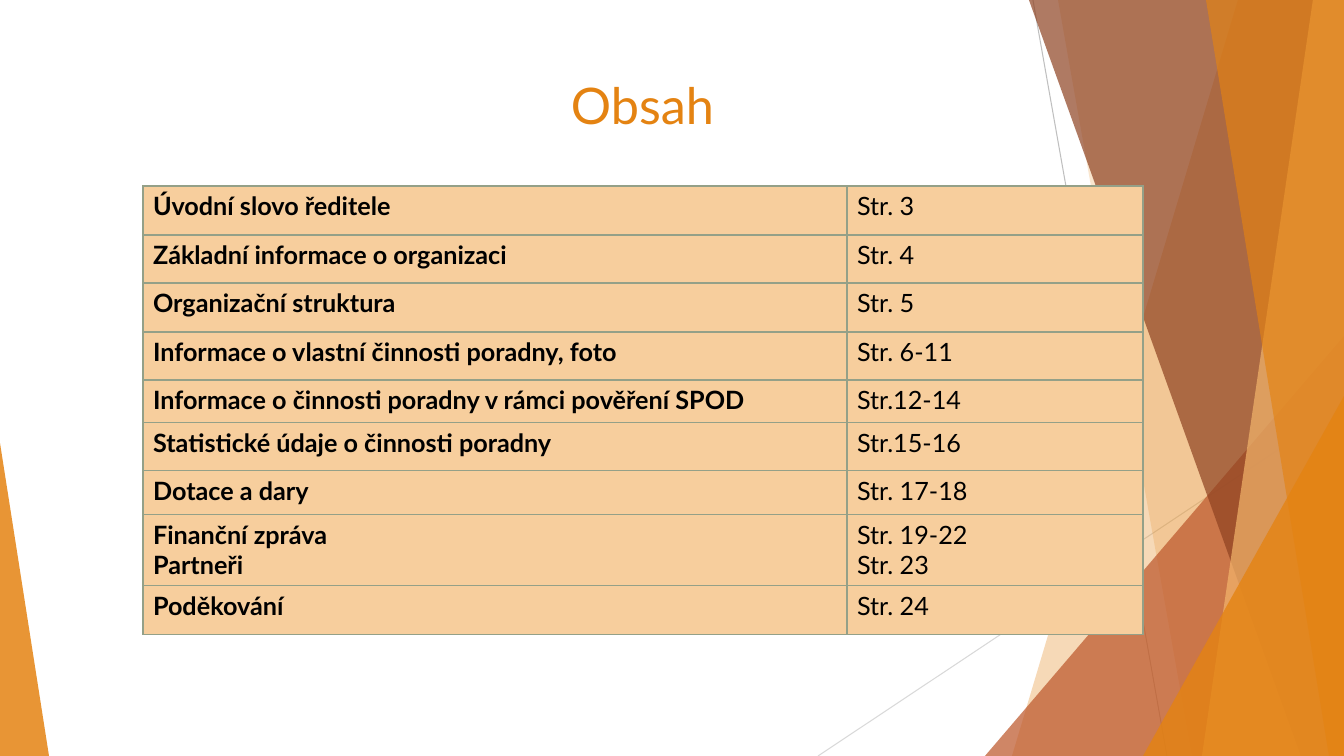
from lxml.etree import SubElement
from pptx import Presentation
from pptx.dml.color import RGBColor
from pptx.enum.shapes import MSO_CONNECTOR, MSO_SHAPE
from pptx.enum.text import MSO_ANCHOR, PP_ALIGN
from pptx.oxml import parse_xml
from pptx.oxml.ns import nsdecls, qn
from pptx.util import Pt

WIDTH, HEIGHT = 1344, 756
SCALE = 12192000 / WIDTH
FONT = "Lato"
COLORS = {
    "orange": "E48312",
    "light orange": "F3B56C",
    "rust": "BD582C",
    "brown": "8E4221",
    "cell": "F7CE9D",
    "border": "94A088",
    "text": "000000",
    "grey": "BFBFBF",
    "light grey": "D9D9D9",
}
CONTENTS = [
    ("Úvodní slovo ředitele", "Str. 3", 49),
    ("Základní informace o organizaci", "Str. 4", 48),
    ("Organizační struktura", "Str. 5", 49),
    ("Informace o vlastní činnosti poradny, foto", "Str. 6-11", 48),
    ("Informace o činnosti poradny v rámci pověření SPOD", "Str.12-14", 43),
    ("Statistické údaje o činnosti poradny", "Str.15-16", 48),
    ("Dotace a dary", "Str. 17-18", 44),
    ("Finanční zpráva\nPartneři", "Str. 19-22\nStr. 23", 70),
    ("Poděkování", "Str. 24", 49),
]


def px(length):
    return round(length * SCALE)


def rgb(name):
    return RGBColor.from_string(COLORS[name])


class SlideBuilder:
    def __init__(self, presentation):
        self.slide = presentation.slides.add_slide(presentation.slide_layouts[5])
        self.shapes = self.slide.shapes

    def paint(self, shape, color, opacity):
        shape.shadow.inherit = False
        shape.line.fill.background()
        shape.fill.solid()
        shape.fill.fore_color.rgb = rgb(color)
        color_element = shape.element.spPr.find(qn("a:solidFill"))[0]
        SubElement(color_element, qn("a:alpha"), val=str(opacity * 1000))

    def line(self, x1, y1, x2, y2, color):
        connector = self.shapes.add_connector(
            MSO_CONNECTOR.STRAIGHT, px(x1), px(y1), px(x2), px(y2))
        connector.line.color.rgb = rgb(color)
        connector.line.width = Pt(0.75)
        SubElement(connector.element.spPr, qn("a:effectLst"))

    def right_band(self, top_x, bottom_x, color, opacity):
        builder = self.shapes.build_freeform(top_x, 0, scale=SCALE)
        builder.add_line_segments([(WIDTH, 0), (WIDTH, HEIGHT), (bottom_x, HEIGHT)])
        self.paint(builder.convert_to_shape(), color, opacity)

    def bottom_triangle(self, left, top, width, apex, color, opacity):
        shape = self.shapes.add_shape(
            MSO_SHAPE.ISOSCELES_TRIANGLE,
            px(left), px(top), px(width), px(HEIGHT - top))
        shape.adjustments[0] = apex
        self.paint(shape, color, opacity)

    def style(self, paragraph, size, color, bold=False):
        paragraph.font.name = FONT
        paragraph.font.size = Pt(size)
        paragraph.font.bold = bold
        paragraph.font.color.rgb = rgb(color)

    def title(self, text, left, top, width, height):
        title = self.shapes.title
        self.shapes.element.append(title.element)
        title.left, title.top = px(left), px(top)
        title.width, title.height = px(width), px(height)
        title.text_frame.text = text
        title.text_frame.vertical_anchor = MSO_ANCHOR.TOP
        paragraph = title.text_frame.paragraphs[0]
        paragraph.alignment = PP_ALIGN.CENTER
        self.style(paragraph, 36, "orange")

    def cell(self, cell, text, bold):
        cell.text = text
        cell.fill.solid()
        cell.fill.fore_color.rgb = rgb("cell")
        for paragraph in cell.text_frame.paragraphs:
            self.style(paragraph, 18, "text", bold)
        properties = cell._tc.get_or_add_tcPr()
        for index, side in enumerate("LRTB"):
            properties.insert(index, parse_xml(
                f'<a:ln{side} {nsdecls("a")} w="{Pt(1)}"><a:solidFill>'
                f'<a:srgbClr val="{COLORS["border"]}"/></a:solidFill></a:ln{side}>'))

    def contents_table(self, rows, left, top, column_widths):
        height = sum(row[-1] for row in rows)
        table = self.shapes.add_table(
            len(rows), len(column_widths), px(left), px(top),
            px(sum(column_widths)), px(height)).table
        table.first_row = False
        table.horz_banding = False
        for column, width in zip(table.columns, column_widths):
            column.width = px(width)
        for row, (heading, pages, row_height) in zip(table.rows, rows):
            row.height = px(row_height)
            self.cell(row.cells[0], heading, True)
            self.cell(row.cells[1], pages, False)


def main():
    presentation = Presentation()
    presentation.slide_width = px(WIDTH)
    presentation.slide_height = px(HEIGHT)
    builder = SlideBuilder(presentation)

    builder.line(1033, 0, 1167, HEIGHT, "grey")
    builder.line(WIDTH, 406, 818, HEIGHT, "light grey")
    builder.right_band(1238, 1012, "orange", 30)
    builder.right_band(1058, 1192, "orange", 20)
    builder.bottom_triangle(985, 336, 359, 1, "rust", 72)
    builder.right_band(1029, 1301, "brown", 70)
    builder.right_band(1313, 1202, "light orange", 70)
    builder.right_band(1206, 1329, "orange", 65)
    builder.bottom_triangle(1143, 396, 201, 1, "orange", 80)
    builder.bottom_triangle(0, 443, 49, 0, "orange", 85)

    builder.title("Obsah", 101, 69, 1083, 176)
    builder.contents_table(CONTENTS, 143, 186, (704, 296))
    presentation.save("out.pptx")


if __name__ == "__main__":
    main()
